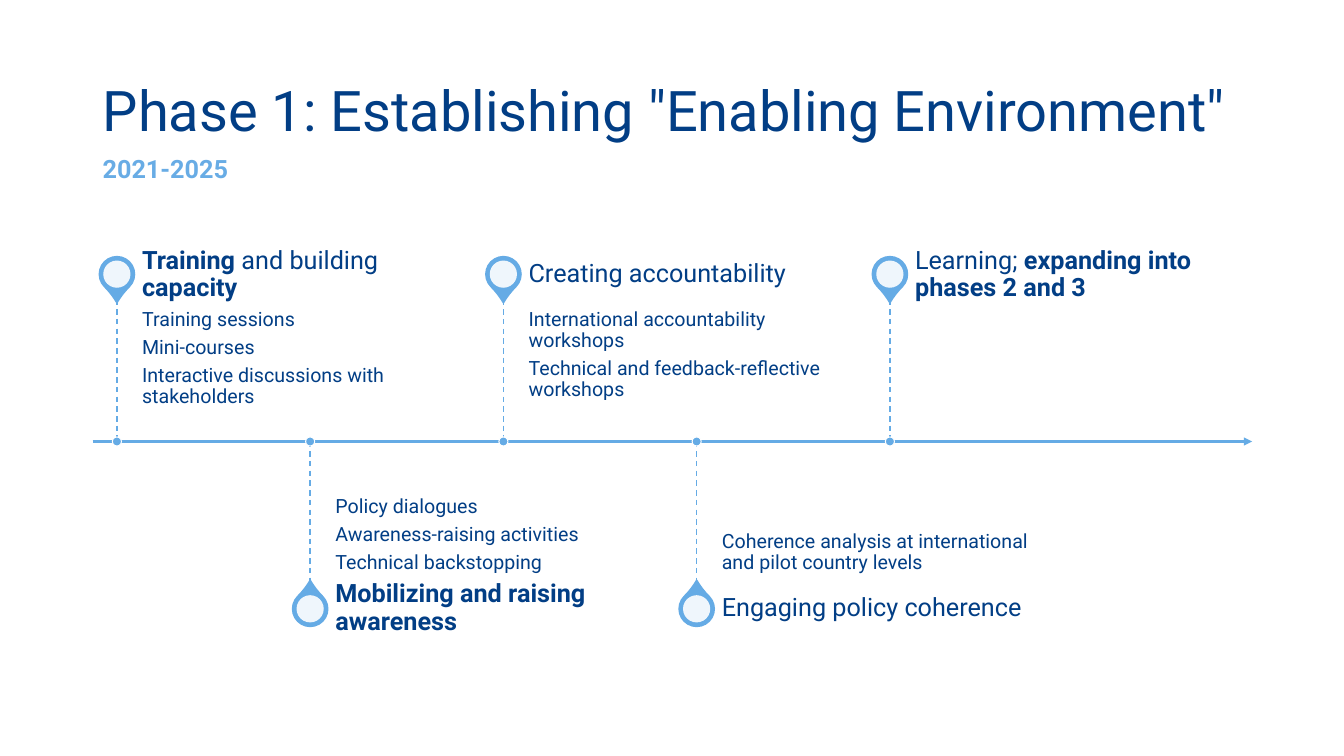
from dataclasses import dataclass
from lxml import etree
from pptx import Presentation
from pptx.dml.color import RGBColor
from pptx.enum.dml import MSO_LINE
from pptx.enum.shapes import MSO_CONNECTOR, MSO_SHAPE
from pptx.enum.text import MSO_ANCHOR, MSO_AUTO_SIZE, PP_ALIGN
from pptx.oxml.ns import qn
from pptx.util import Inches, Pt


@dataclass(frozen=True)
class Theme:
    font: str = "Roboto"
    navy: RGBColor = RGBColor(0x02, 0x3E, 0x85)
    sky: RGBColor = RGBColor(0x65, 0xAB, 0xE5)
    period: RGBColor = RGBColor(0x68, 0xAC, 0xE5)
    white: RGBColor = RGBColor(0xFF, 0xFF, 0xFF)
    title_size: int = 40
    heading_size: int = 18
    detail_size: int = 14


THEME = Theme()
SLIDE_WIDTH, SLIDE_HEIGHT = 13.33, 7.5
LEFT = 0.92
AXIS_WIDTH = 11.5
AXIS_Y = 4.38
COLUMN = AXIS_WIDTH / 6
FIRST_PIN_X = LEFT + COLUMN / 8
DETAIL_HEIGHT = 1.41
HEADING_HEIGHT = 0.49
PIN_OFFSET = 1.66
TEXT_OFFSET = 0.25
TEXT_WIDTH = COLUMN * 5 / 3

# Each milestone: heading runs as (text, bold), then its activities.
MILESTONES = [
    ([("Training", True), (" and building ", False), ("capacity", True)],
     ["Training sessions", "Mini-courses",
      "Interactive discussions with stakeholders"]),
    ([("Mobilizing and raising awareness", True)],
     ["Policy dialogues", "Awareness-raising activities",
      "Technical backstopping"]),
    ([("Creating accountability", False)],
     ["International accountability workshops",
      "Technical and feedback-reflective workshops"]),
    ([("Engaging policy coherence", False)],
     ["Coherence analysis at international and pilot country levels"]),
    ([("Learning; ", False), ("expanding into phases 2 and 3", True)], []),
]


def place(shape, left, top, width, height):
    shape.left, shape.top = Inches(left), Inches(top)
    shape.width, shape.height = Inches(width), Inches(height)


def set_frame(frame, anchor, insets):
    """Wrap the text and set insets in the order left, top, right, bottom."""
    frame.word_wrap = True
    frame.auto_size = MSO_AUTO_SIZE.NONE
    frame.vertical_anchor = anchor
    (frame.margin_left, frame.margin_top,
     frame.margin_right, frame.margin_bottom) = map(Inches, insets)


def format_runs(paragraph, size, color=THEME.navy):
    paragraph.alignment = PP_ALIGN.LEFT
    paragraph.line_spacing = 0.9
    for run in paragraph.runs:
        run.font.name = THEME.font
        run.font.size = Pt(size)
        run.font.color.rgb = color


def add_text_box(slide, box, anchor, insets):
    shape = slide.shapes.add_textbox(*map(Inches, box))
    set_frame(shape.text_frame, anchor, insets)
    return shape.text_frame


def add_line(slide, start, end, width):
    line = slide.shapes.add_connector(
        MSO_CONNECTOR.STRAIGHT, *map(Inches, start + end))
    line.line.color.rgb = THEME.sky
    line.line.width = Pt(width)
    etree.SubElement(line._element.spPr, qn("a:effectLst"))
    return line


def add_centered_shape(slide, kind, x, y, size, fill, outline=None, width=1):
    shape = slide.shapes.add_shape(
        kind, *map(Inches, (x - size / 2, y - size / 2, size, size)))
    shape.shadow.inherit = False
    shape.fill.solid()
    shape.fill.fore_color.rgb = fill
    if outline is None:
        shape.line.fill.background()
    else:
        shape.line.color.rgb = outline
        shape.line.width = Pt(width)
    return shape


def add_title(slide):
    title = slide.shapes.title
    place(title, LEFT, 0.4, SLIDE_WIDTH - LEFT - 0.63, 1.45)
    frame = title.text_frame
    set_frame(frame, MSO_ANCHOR.MIDDLE, (0.1, 0.05, 0.1, 0.05))
    frame.text = 'Phase 1: Establishing "Enabling Environment"'
    format_runs(frame.paragraphs[0], THEME.title_size)


def add_period(slide):
    frame = add_text_box(slide, (LEFT, 1.47, 3, 0.4), MSO_ANCHOR.TOP,
                         (0.1, 0.05, 0.1, 0.05))
    frame.text = "2021-2025"
    paragraph = frame.paragraphs[0]
    format_runs(paragraph, THEME.heading_size, THEME.period)
    paragraph.line_spacing = 1.0
    paragraph.runs[0].font.bold = True


def add_axis(slide):
    axis = add_line(slide, (LEFT, AXIS_Y), (LEFT + AXIS_WIDTH, AXIS_Y), 1.5)
    etree.SubElement(axis.line._get_or_add_ln(), qn("a:tailEnd"),
                     type="triangle")


def add_pin(slide, x, y, above):
    drop = add_centered_shape(slide, MSO_SHAPE.TEAR, x, y, 0.35,
                              THEME.sky, THEME.sky)
    drop.adjustments[0] = 1.15
    drop.rotation = 135 if above else 315
    hole = add_centered_shape(slide, MSO_SHAPE.OVAL, x, y, 0.27, THEME.white)
    color = hole._element.spPr.find(qn("a:solidFill"))[0]
    etree.SubElement(color, qn("a:alpha"), val="90000")


def add_details(slide, x, activities, above):
    top = AXIS_Y - DETAIL_HEIGHT if above else AXIS_Y
    anchor = MSO_ANCHOR.TOP if above else MSO_ANCHOR.BOTTOM
    insets = (0, 0.1, 0.1, 0.15) if above else (0, 0.15, 0, 0.1)
    frame = add_text_box(slide, (x, top, TEXT_WIDTH, DETAIL_HEIGHT),
                         anchor, insets)
    for index, activity in enumerate(activities):
        paragraph = frame.add_paragraph() if index else frame.paragraphs[0]
        paragraph.text = activity
        format_runs(paragraph, THEME.detail_size)
        if index:
            paragraph.space_before = Pt(4.9)


def add_heading(slide, x, runs, above):
    top = (AXIS_Y - DETAIL_HEIGHT - HEADING_HEIGHT if above
           else AXIS_Y + DETAIL_HEIGHT)
    frame = add_text_box(slide, (x, top, TEXT_WIDTH, HEADING_HEIGHT),
                         MSO_ANCHOR.MIDDLE, (0, 0, 0.12, 0))
    paragraph = frame.paragraphs[0]
    for text, bold in runs:
        run = paragraph.add_run()
        run.text = text
        run.font.bold = bold
    format_runs(paragraph, THEME.heading_size)


def add_milestone(slide, index, heading, activities):
    """Even milestones stand above the axis, odd ones hang below it."""
    above = index % 2 == 0
    direction = -1 if above else 1
    x = FIRST_PIN_X + index * COLUMN
    add_pin(slide, x, AXIS_Y + direction * PIN_OFFSET, above)
    if activities:
        add_details(slide, x + TEXT_OFFSET, activities, above)
    add_heading(slide, x + TEXT_OFFSET, heading, above)
    far_end = AXIS_Y + direction * DETAIL_HEIGHT
    stem = add_line(slide, (x, min(far_end, AXIS_Y)),
                    (x, max(far_end, AXIS_Y)), 1)
    stem.line.dash_style = MSO_LINE.DASH
    add_centered_shape(slide, MSO_SHAPE.OVAL, x, AXIS_Y, 0.09,
                       THEME.sky, THEME.white, 0.75)


def main():
    presentation = Presentation()
    presentation.slide_width = Inches(SLIDE_WIDTH)
    presentation.slide_height = Inches(SLIDE_HEIGHT)
    slide = presentation.slides.add_slide(presentation.slide_layouts[5])
    add_title(slide)
    add_axis(slide)
    for index, (heading, activities) in enumerate(MILESTONES):
        add_milestone(slide, index, heading, activities)
    add_period(slide)
    presentation.save("out.pptx")


if __name__ == "__main__":
    main()
